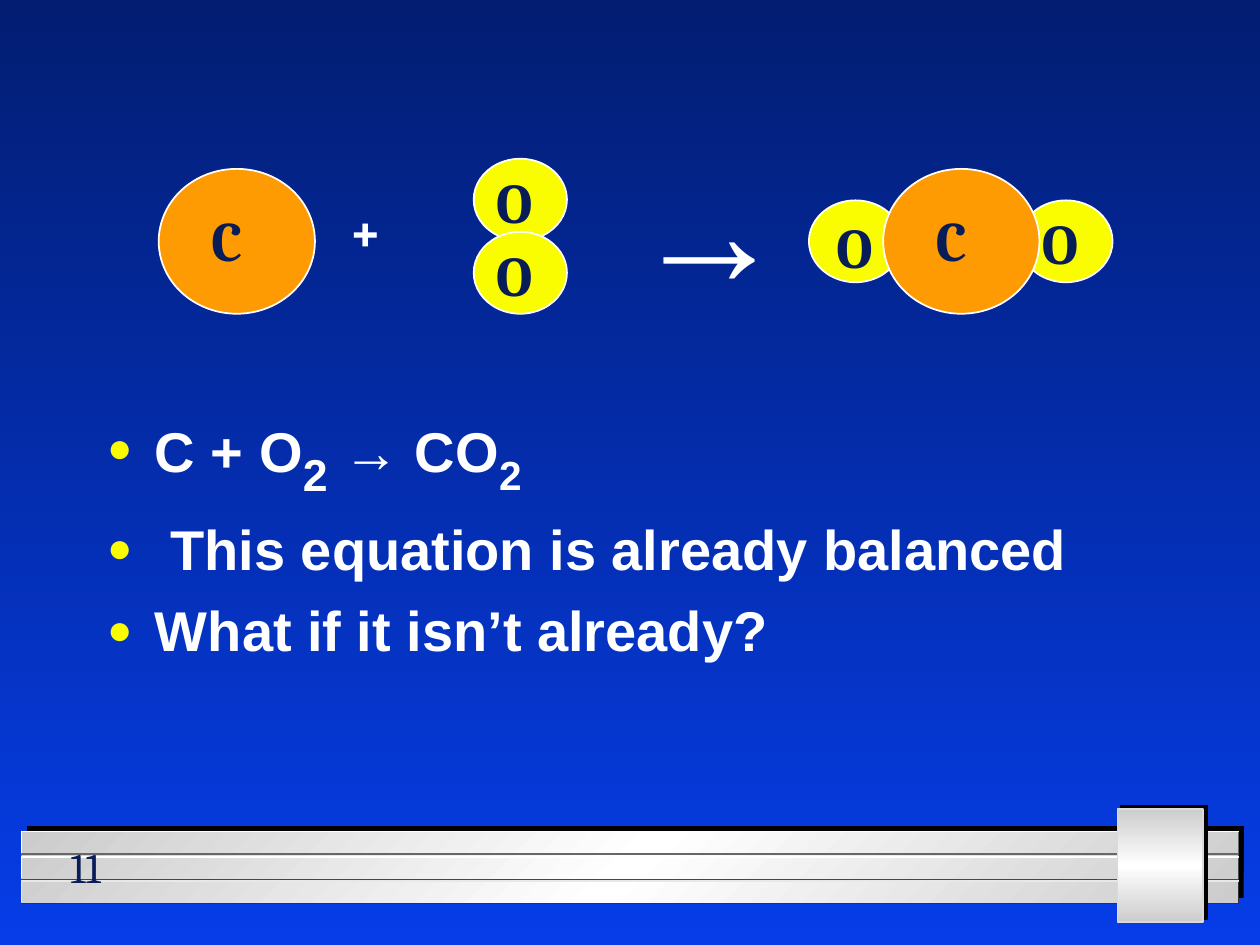
from dataclasses import dataclass

from lxml.etree import SubElement
from pptx import Presentation
from pptx.dml.color import RGBColor
from pptx.enum.shapes import MSO_SHAPE
from pptx.enum.text import MSO_ANCHOR, MSO_AUTO_SIZE
from pptx.oxml.ns import qn
from pptx.util import Inches, Pt

NAVY, WHITE, YELLOW, ORANGE = "081D58", "FFFFFF", "FAFD00", "FE9B03"
METAL = [(0, "CCCCCC"), (50, "FFFFFF"), (100, "CCCCCC")]


@dataclass(frozen=True)
class Element:
    symbol: str
    width: float
    height: float
    color: str


@dataclass(frozen=True)
class Atom:
    element: Element
    left: float
    top: float
    label_dx: float
    label_dy: float


@dataclass(frozen=True)
class Groove:
    top: float
    light: str
    dark: str


CARBON = Element("C", 1.24, 1.15, ORANGE)
OXYGEN = Element("O", 0.74, 0.65, YELLOW)
ATOMS = [
    Atom(CARBON, 1.26, 1.34, 0.32, 0.24),
    Atom(OXYGEN, 8.09, 1.59, 0.08, 0.02),
    Atom(OXYGEN, 6.42, 1.59, 0.12, 0.05),
    Atom(CARBON, 7.01, 1.34, 0.32, 0.24),
    Atom(OXYGEN, 3.76, 1.26, 0.08, 0.02),
    Atom(OXYGEN, 3.76, 1.84, 0.08, 0.02),
]
GROOVES = [
    Groove(6.6, "FFFFFF", "676767"),
    Groove(6.8, "FFFFFF", "474747"),
    Groove(6.99, "E8E8E8", "333333"),
]
# Each bullet is a list of (text, size, is subscript)
BULLETS = [
    [("C + O", 32, False), ("2", 44, True), (" → CO", 32, False), ("2", 40, True)],
    [(" This equation is already balanced", 32, False)],
    [("What if it isn’t already?", 32, False)],
]


def rgb(color: str) -> RGBColor:
    return RGBColor.from_string(color)


def set_gradient(fill, element, stops, angle: int) -> None:
    """Apply any number of stops; angle is clockwise in degrees."""
    fill.gradient()
    fill.gradient_angle = (360 - angle) % 360
    gs_list = next(element.iter(qn("a:gsLst")))
    for gs in list(gs_list):
        gs_list.remove(gs)
    for position, color in stops:
        gs = SubElement(gs_list, qn("a:gs"), pos=str(position * 1000))
        SubElement(gs, qn("a:srgbClr"), val=color)


def add_run(p, text: str, *, size: float, color: str = WHITE,
            font: str = "Arial", bold: bool = True, sub: bool = False) -> None:
    r = p.add_run()
    r.text = text
    r.font.size, r.font.name, r.font.bold = Pt(size), font, bold
    r.font.color.rgb = rgb(color)
    if sub:
        r.font._element.set("baseline", "-25000")


def add_text(s, text: str, left: float, top: float, width: float = 0.33,
             height: float = 0.63, *, wrap: bool = True, **style) -> None:
    box = s.shapes.add_textbox(*map(Inches, (left, top, width, height)))
    tf = box.text_frame
    tf.word_wrap = wrap
    add_run(tf.paragraphs[0], text, **style)


def add_shape(s, kind, left: float, top: float, width: float, height: float):
    sp = s.shapes.add_shape(kind, *map(Inches, (left, top, width, height)))
    sp.shadow.inherit = False
    sp.line.fill.background()
    return sp


def set_line(sp, color: str) -> None:
    sp.line.color.rgb = rgb(color)
    sp.line.width = Pt(1)


def add_metal(s, left: float, top: float, width: float, height: float,
              angle: int, shadow: float):
    """Add a metallic rectangle with a hard shadow up and to the right."""
    sp = add_shape(s, MSO_SHAPE.RECTANGLE, left, top, width, height)
    set_gradient(sp.fill, sp._element, METAL, angle)
    effects = sp._element.spPr.find(qn("a:effectLst"))
    outer = SubElement(effects, qn("a:outerShdw"), dist=str(Pt(shadow)),
                       dir=str(315 * 60000), algn="ctr", rotWithShape="0")
    SubElement(outer, qn("a:srgbClr"), val="000000")
    return sp


def add_polyline(s, points, color: str) -> None:
    pts = [(Inches(x), Inches(y)) for x, y in points]
    builder = s.shapes.build_freeform(*pts[0])
    builder.add_line_segments(pts[1:], close=False)
    sp = builder.convert_to_shape()
    sp.shadow.inherit = False
    sp.fill.background()
    set_line(sp, color)


def add_footer(s) -> None:
    left, right, depth = 0.17, 9.83, 0.17
    add_metal(s, left, 6.6, right - left, 0.57, 45, 4.2)
    for g in GROOVES:
        add_polyline(s, [(left, g.top + depth), (left, g.top), (right, g.top)], g.light)
    for g in GROOVES:
        top = g.top + 0.01
        add_polyline(s, [(right, top), (right, top + depth), (left, top + depth)], g.dark)
    set_line(add_metal(s, 8.87, 6.42, 0.68, 0.9, 90, 2.8), "DADADA")
    add_text(s, "11", 0.46, 6.63, 0.62, 0.5, wrap=False,
             size=24, color=NAVY, font="Cambria", bold=False)


def add_atom(s, atom: Atom) -> None:
    e = atom.element
    sp = add_shape(s, MSO_SHAPE.OVAL, atom.left, atom.top, e.width, e.height)
    sp.fill.solid()
    sp.fill.fore_color.rgb = rgb(e.color)
    set_line(sp, WHITE)
    add_text(s, e.symbol, atom.left + atom.label_dx, atom.top + atom.label_dy,
             size=32, color=NAVY, font="Cambria")


def set_bullet(p) -> None:
    pPr = p._p.get_or_add_pPr()
    pPr.set("marL", str(Inches(0.38)))
    pPr.set("indent", str(-Inches(0.38)))
    SubElement(SubElement(pPr, qn("a:buClr")), qn("a:srgbClr"), val=YELLOW)
    SubElement(pPr, qn("a:buSzPct"), val="75000")
    SubElement(pPr, qn("a:buFont"), typeface="Arial")
    SubElement(pPr, qn("a:buChar"), char="●")


def fill_body(body) -> None:
    body.left, body.top, body.width, body.height = map(Inches, (0.75, 3, 8.5, 3.25))
    tf = body.text_frame
    tf.word_wrap, tf.auto_size = True, MSO_AUTO_SIZE.NONE
    tf.vertical_anchor = MSO_ANCHOR.TOP
    tf.margin_top = Inches(0.14)
    for i, runs in enumerate(BULLETS):
        p = tf.add_paragraph() if i else tf.paragraphs[0]
        set_bullet(p)
        p.space_before = Pt(8 if i else 0)
        for text, size, sub in runs:
            add_run(p, text, size=size, sub=sub)


def main() -> None:
    prs = Presentation()
    prs.slide_width, prs.slide_height = Inches(10), Inches(7.5)
    s = prs.slides.add_slide(prs.slide_layouts[1])
    title = s.shapes.title._element
    title.getparent().remove(title)
    set_gradient(s.background.fill, s._element, [(0, "021D72"), (100, "063DE8")], 90)
    add_footer(s)
    fill_body(s.placeholders[1])
    for atom in ATOMS:
        add_atom(s, atom)
    add_text(s, "+", 2.67, 1.5, size=32, font="Cambria")
    add_text(s, "→", 4.92, 1, height=1.57, size=88)
    prs.save("out.pptx")


if __name__ == "__main__":
    main()
